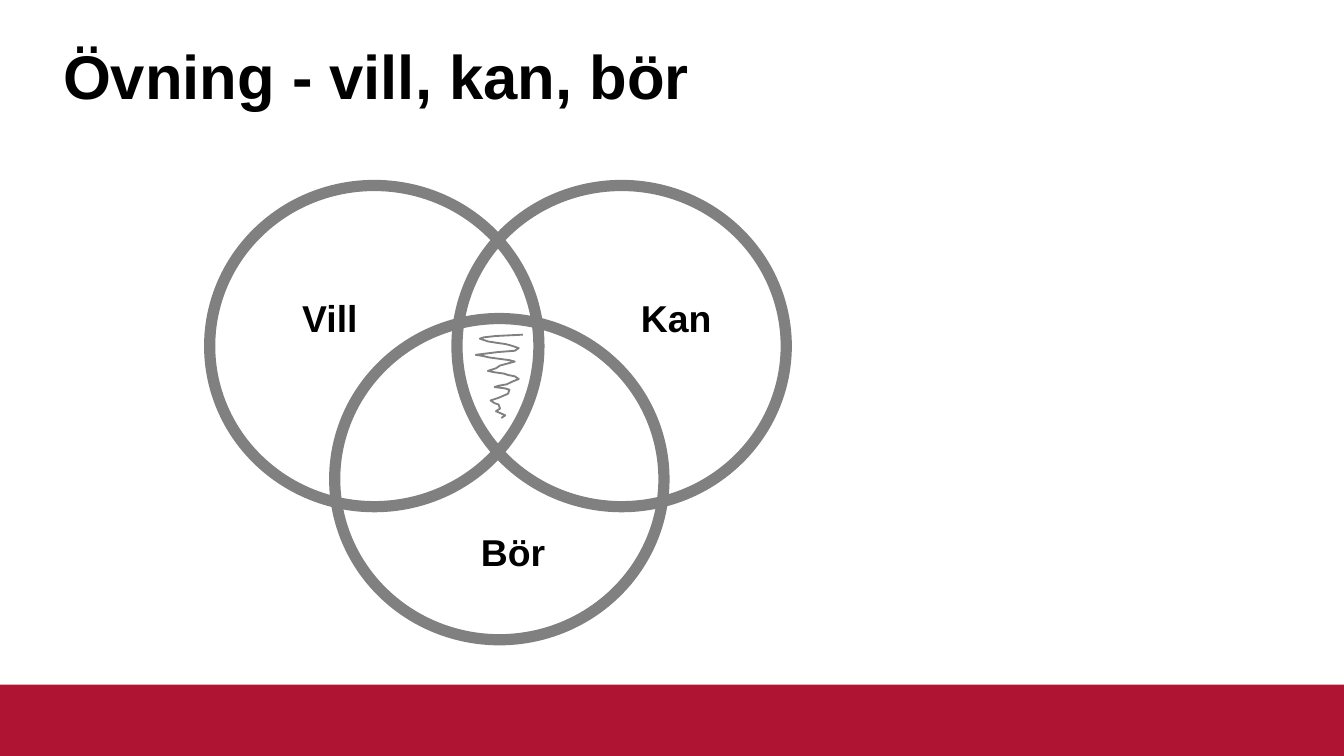
import pptx
import pptx.util
import pptx.dml.color
import pptx.enum.shapes
import pptx.enum.text
from dataclasses import dataclass

Inches = pptx.util.Inches
Pt = pptx.util.Pt
Anchor = pptx.enum.text.MSO_ANCHOR
Preset = pptx.enum.shapes.MSO_SHAPE


@dataclass(frozen=True)
class Theme:
    font: str = "Arial"
    text: str = "000000"
    band: str = "AF1432"
    outline: str = "808080"
    title_size: int = 33
    label_size: int = 20
    ring_width: int = 6
    scribble_width: int = 1


def color(value):
    return pptx.dml.color.RGBColor.from_string(value)


def set_attributes(target, values):
    for name, value in values.items():
        setattr(target, name, value)


class SlideBuilder:
    def __init__(self, slide, theme):
        self.slide = slide
        self.theme = theme

    def outline(self, shape, width):
        shape.shadow.inherit = False
        shape.fill.background()
        shape.line.color.rgb = color(self.theme.outline)
        shape.line.width = Pt(width)

    def band(self, left, top, width, height):
        shape = self.slide.shapes.add_shape(
            Preset.RECTANGLE, *map(Inches, (left, top, width, height)))
        shape.shadow.inherit = False
        shape.fill.solid()
        shape.fill.fore_color.rgb = color(self.theme.band)
        shape.line.fill.background()

    def ring(self, left, top, width, height):
        shape = self.slide.shapes.add_shape(
            Preset.OVAL, *map(Inches, (left, top, width, height)))
        self.outline(shape, self.theme.ring_width)

    def text(self, text, box, size, frame_format=None, line_spacing=1.0):
        frame = self.slide.shapes.add_textbox(*map(Inches, box)).text_frame
        set_attributes(frame, {"word_wrap": True, **(frame_format or {})})
        paragraph = frame.paragraphs[0]
        paragraph.text = text
        paragraph.line_spacing = line_spacing
        font = paragraph.runs[0].font
        set_attributes(font, {"name": self.theme.font, "size": Pt(size), "bold": True})
        font.color.rgb = color(self.theme.text)

    def scribble(self, points):
        """Draw an open stroke through points given in inches."""
        start, *rest = [(Inches(x), Inches(y)) for x, y in points]
        builder = self.slide.shapes.build_freeform(*start)
        builder.add_line_segments(rest, close=False)
        self.outline(builder.convert_to_shape(), self.theme.scribble_width)


# A 16:9 slide
SLIDE_WIDTH = 10
SLIDE_HEIGHT = SLIDE_WIDTH * 9 / 16
BAND_HEIGHT = 0.53

RING_SIZE = (2.45, 2.39)
RING_CORNERS = [(1.56, 1.38), (2.49, 2.37), (3.4, 1.38)]
LABEL_SIZE = (0.88, 0.44)
LABELS = {"Vill": (2.15, 2.15), "Bör": (3.48, 3.89), "Kan": (4.67, 2.15)}
SCRIBBLE = [
    (3.89, 2.49), (3.69, 2.5), (3.6, 2.51), (3.57, 2.52), (3.63, 2.54),
    (3.69, 2.55), (3.76, 2.56), (3.8, 2.57), (3.86, 2.59), (3.83, 2.61),
    (3.7, 2.62), (3.54, 2.64), (3.6, 2.65), (3.64, 2.66), (3.79, 2.68),
    (3.83, 2.69), (3.72, 2.72), (3.69, 2.74), (3.63, 2.76), (3.68, 2.77),
    (3.75, 2.78), (3.78, 2.79), (3.83, 2.8), (3.86, 2.82), (3.81, 2.84),
    (3.77, 2.86), (3.71, 2.87), (3.68, 2.88), (3.76, 2.89), (3.79, 2.9),
    (3.78, 2.93), (3.71, 2.96), (3.65, 2.98), (3.68, 3), (3.71, 3.01),
    (3.72, 3.04), (3.69, 3.06), (3.76, 3.09), (3.73, 3.11),
]


def main():
    presentation = pptx.Presentation()
    presentation.slide_width = Inches(SLIDE_WIDTH)
    presentation.slide_height = Inches(SLIDE_HEIGHT)
    theme = Theme()
    slide = presentation.slides.add_slide(presentation.slide_layouts[6])
    builder = SlideBuilder(slide, theme)

    # Footer band and title
    builder.band(0, SLIDE_HEIGHT - BAND_HEIGHT, SLIDE_WIDTH, BAND_HEIGHT)
    margins = dict.fromkeys(
        ("margin_left", "margin_top", "margin_right", "margin_bottom"), 0)
    builder.text("Övning - vill, kan, bör", (0.47, 0.32, 9.06, 0.55), theme.title_size,
                 {"vertical_anchor": Anchor.MIDDLE, **margins}, line_spacing=0.9)

    # Three overlapping rings
    for corner in RING_CORNERS:
        builder.ring(*corner, *RING_SIZE)

    # Ring labels
    for label, corner in LABELS.items():
        builder.text(label, corner + LABEL_SIZE, theme.label_size)

    # Scribble in the shared centre
    builder.scribble(SCRIBBLE)

    presentation.save("out.pptx")


if __name__ == "__main__":
    main()
